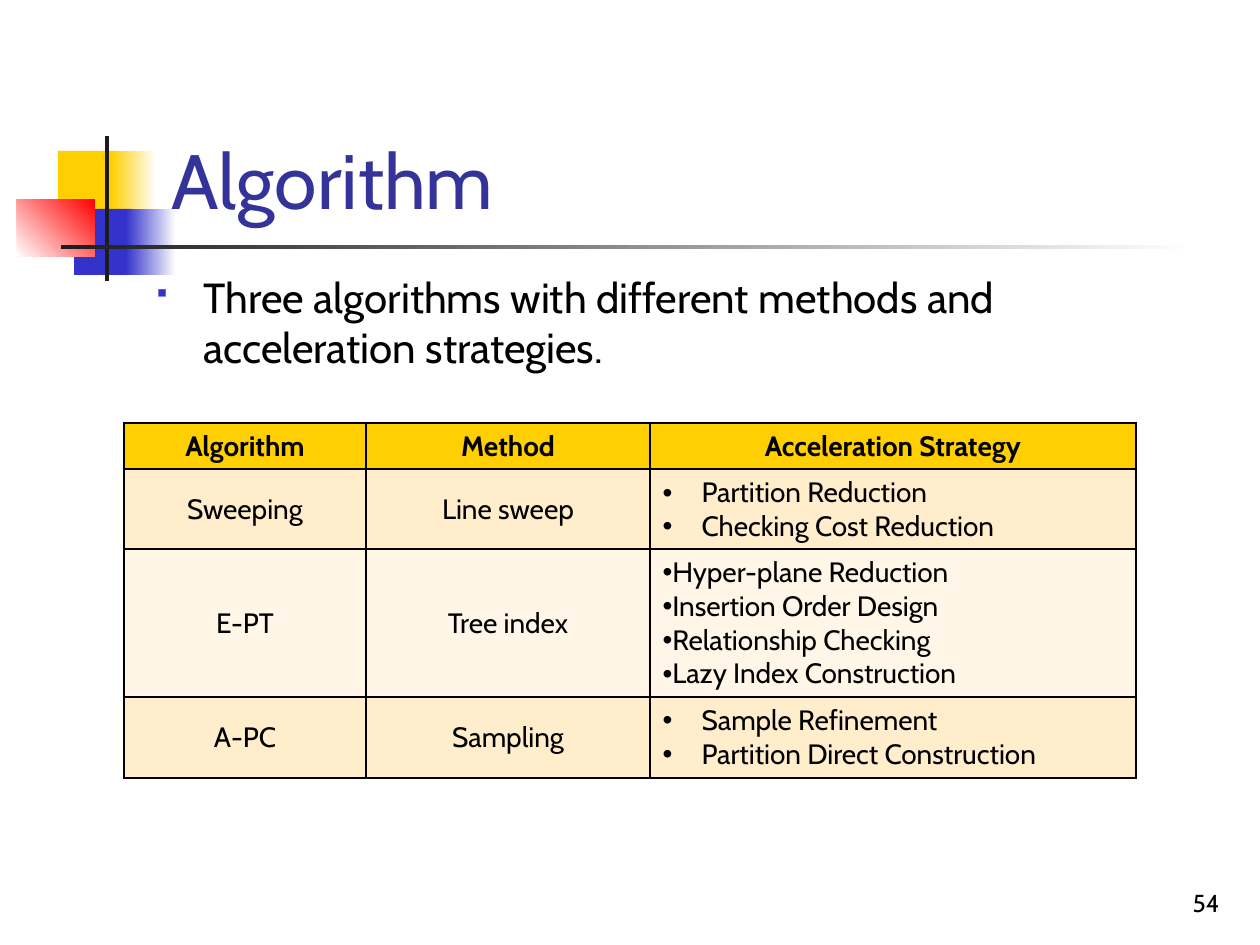
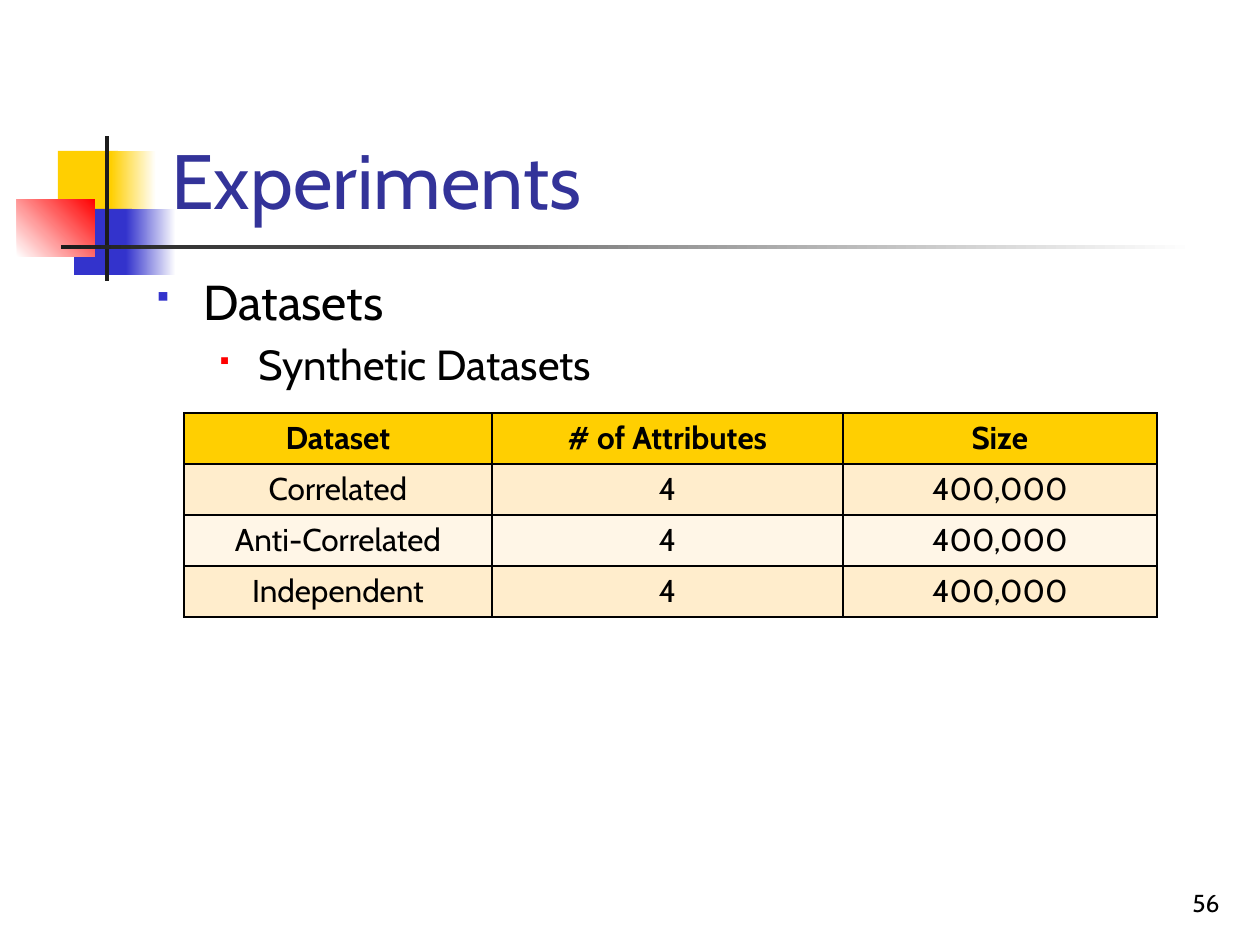
from lxml import etree
from pptx import Presentation, util as u
from pptx.dml.color import RGBColor
from pptx.enum import shapes, text
from pptx.oxml import parse_xml
from pptx.oxml.ns import nsdecls

FONT = "Cabin"
HUES = {
    "ink": "000000", "paper": "FFFFFF", "title": "333399", "gold": "FFCF01",
    "blue": "3333CC", "red": "FF0000", "coal": "1C1C1C",
    "dark": "FFEDCC", "light": "FFF6E7",
}

# box in px, colours (two make a gradient), gradient angle
MOTIF = [
    ((58, 151, 60, 66), ["gold"], 0),
    ((111, 151, 45, 66), ["gold", "paper"], 0),
    ((74, 209, 58, 66), ["blue"], 0),
    ((126, 209, 50, 66), ["blue", "paper"], 0),
    ((17, 199, 78, 58), ["paper", "red"], 45),
    ((105, 136, 4, 145), ["coal"], 0),
    ((61, 245, 1134, 4), ["coal", "paper"], 0),
]
TITLE = (159, 29, 1074, 202)
NUMBER = (970, 861, 262, 63)

# bullet: left margin and hang in px, colour, size in percent
LEVELS = [
    {"left": 47, "hang": 47, "hue": "blue", "scale": 60},
    {"left": 102, "hang": 39, "hue": "red", "scale": 55},
]
DOT = {"left": 39, "hang": 39}
FLUSH = {"left": 0, "hang": 39}

SLIDES = [
    {
        "title": "Algorithm", "number": "54",
        "body": (144, 265, 932, 572),
        "points": [
            (0, 24, "Three algorithms with different methods and "
                    "acceleration strategies."),
        ],
        "at": (124, 423), "cols": [242, 284, 486], "rows": [46, 80, 148, 81],
        "size": 16, "anchor": text.MSO_ANCHOR.MIDDLE,
        "cells": [
            ["Algorithm", "Method", "Acceleration Strategy"],
            ["Sweeping", "Line sweep",
             (DOT, ["Partition Reduction", "Checking Cost Reduction"])],
            ["E-PT", "Tree index",
             (FLUSH, ["Hyper-plane Reduction", "Insertion Order Design",
                      "Relationship Checking", "Lazy Index Construction"])],
            ["A-PC", "Sampling",
             (DOT, ["Sample Refinement", "Partition Direct Construction"])],
        ],
    },
    {
        "title": "Experiments", "number": "56",
        "body": (144, 265, 698, 219),
        "points": [(0, 28, "Datasets"), (1, 24, "Synthetic Datasets")],
        "at": (184, 413), "cols": [308, 351, 314], "rows": [51] * 4,
        "size": 18, "anchor": text.MSO_ANCHOR.TOP,
        "cells": [
            ["Dataset", "# of Attributes", "Size"],
            ["Correlated", "4", "400,000"],
            ["Anti-Correlated", "4", "400,000"],
            ["Independent", "4", "400,000"],
        ],
    },
]


def px(n):
    return round(n * 914400 / 126)


def hue(name):
    return RGBColor.from_string(HUES[name])


def mark(para, left, hang, hue=None, scale=None):
    """Give a paragraph a square bullet, or a dot when no colour is named."""
    props = para._p.get_or_add_pPr()
    props.set("marL", str(px(left)))
    props.set("indent", str(-px(hang)))
    if hue:
        parts = [
            '<a:spcBef {}><a:spcPct val="20000"/></a:spcBef>',
            '<a:buClr {}><a:srgbClr val="%s"/></a:buClr>' % HUES[hue],
            '<a:buSzPct {} val="%d"/>' % (scale * 1000),
            '<a:buFont {} typeface="Wingdings"/>',
            '<a:buChar {} char="§"/>',
        ]
    else:
        parts = ['<a:buFont {} typeface="Arial"/>', '<a:buChar {} char="•"/>']
    for part in parts:
        props.append(parse_xml(part.format(nsdecls("a"))))


def write(para, words, size, color="ink", bold=False, align="LEFT", bullet=None):
    para.alignment = getattr(text.PP_ALIGN, align)
    if bullet:
        mark(para, **bullet)
    run = para.add_run()
    run.text = words
    font = run.font
    font.name, font.size, font.bold = FONT, u.Pt(size), bold
    font.color.rgb = hue(color)


def paras(frame, count):
    """Yield the frame's first paragraph, then new ones."""
    yield frame.paragraphs[0]
    for _ in range(count - 1):
        yield frame.add_paragraph()


def frame(slide, box, anchor="TOP"):
    area = slide.shapes.add_textbox(*map(px, box)).text_frame
    area.word_wrap = True
    area.vertical_anchor = getattr(text.MSO_ANCHOR, anchor)
    return area


def draw_motif(slide):
    for box, names, angle in MOTIF:
        shape = slide.shapes.add_shape(
            shapes.MSO_SHAPE.RECTANGLE, *map(px, box))
        shape.shadow.inherit = False
        shape.line.fill.background()
        if len(names) == 1:
            shape.fill.solid()
            shape.fill.fore_color.rgb = hue(names[0])
            continue
        shape.fill.gradient()
        shape.fill.gradient_angle = angle
        for stop, name in zip(shape.fill.gradient_stops, names):
            stop.color.rgb = hue(name)


def edge(cell):
    """Draw a 1 pt border on each side of a cell."""
    props = cell._tc.get_or_add_tcPr()
    for i, side in enumerate("LRTB"):
        line = parse_xml('<a:ln%s %s w="12700"/>' % (side, nsdecls("a")))
        space = "{%s}" % line.nsmap["a"]
        fill = etree.SubElement(line, space + "solidFill")
        etree.SubElement(fill, space + "srgbClr", val=HUES["ink"])
        props.insert(i, line)


def draw_table(slide, data):
    cols, rows, size = data["cols"], data["rows"], data["size"]
    box = (*data["at"], sum(cols), sum(rows))
    table = slide.shapes.add_table(
        len(rows), len(cols), *map(px, box)).table
    table.first_row = table.horz_banding = False
    for col, wide in zip(table.columns, cols):
        col.width = px(wide)
    for r, (row, high) in enumerate(zip(table.rows, rows)):
        row.height = px(high)
        shade = "gold" if r == 0 else "dark" if r % 2 else "light"
        for cell, item in zip(row.cells, data["cells"][r]):
            cell.fill.solid()
            cell.fill.fore_color.rgb = hue(shade)
            edge(cell)
            if isinstance(item, str):
                if r:
                    cell.vertical_anchor = data["anchor"]
                write(cell.text_frame.paragraphs[0], item, size,
                      bold=r == 0, align="CENTER")
            else:
                bullet, lines = item
                for para, line in zip(paras(cell.text_frame, len(lines)), lines):
                    write(para, line, size, bullet=bullet)


def draw_slide(deck, data):
    slide = deck.slides.add_slide(deck.slide_layouts[6])
    draw_motif(slide)
    write(frame(slide, TITLE, "BOTTOM").paragraphs[0], data["title"], 44,
          color="title")
    write(frame(slide, NUMBER, "BOTTOM").paragraphs[0], data["number"], 14,
          align="RIGHT")
    draw_table(slide, data)
    points = data["points"]
    body = frame(slide, data["body"])
    for para, (level, size, words) in zip(paras(body, len(points)), points):
        para.level = level
        write(para, words, size, bullet=LEVELS[level])


def main():
    deck = Presentation()
    deck.slide_width, deck.slide_height = px(1260), px(945)
    for data in SLIDES:
        draw_slide(deck, data)
    deck.save("out.pptx")


if __name__ == "__main__":
    main()
